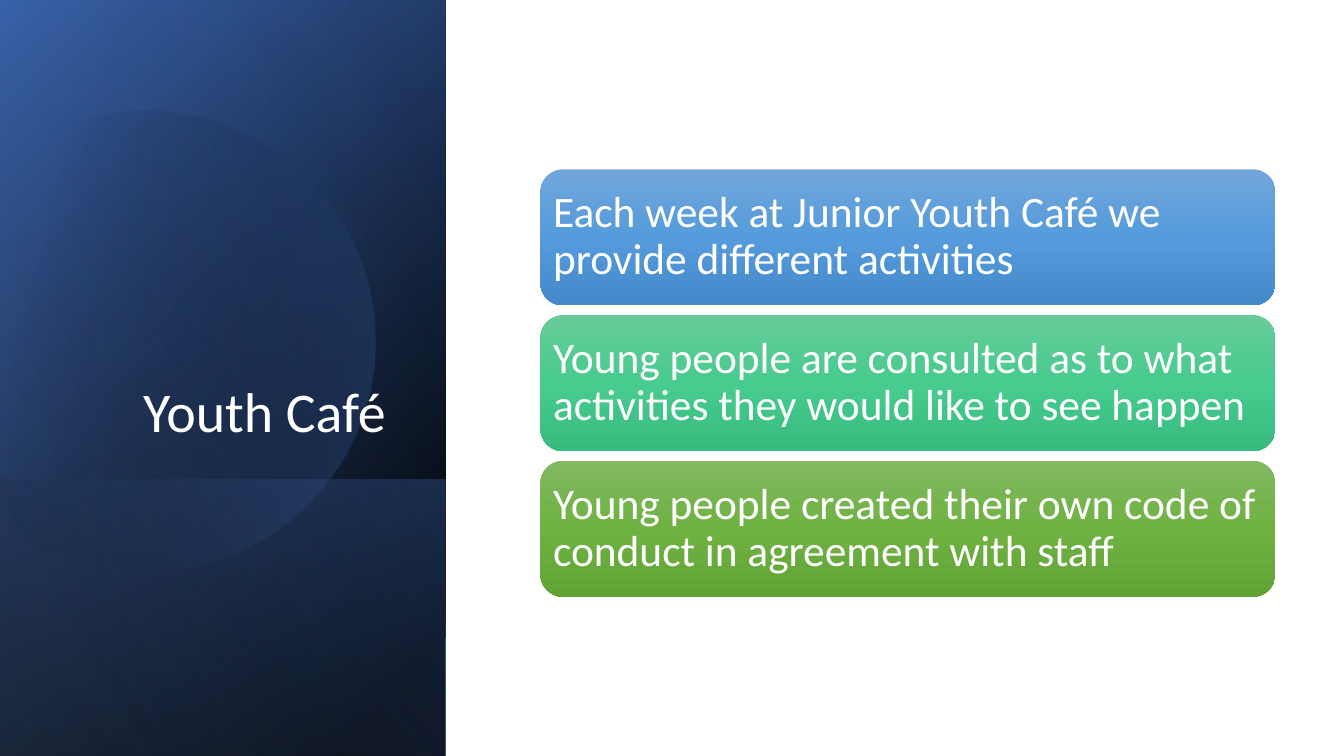
from math import cos, radians, sin

from lxml.etree import SubElement
from pptx import Presentation
from pptx.enum.shapes import MSO_SHAPE
from pptx.enum.text import MSO_ANCHOR, PP_ALIGN
from pptx.oxml.ns import qn
from pptx.util import Inches, Pt

# Content
TITLE = "Youth Café "
COLORS = {
    "white": "FFFFFF", "black": "000000", "navy": "2F5597",
    "blue": "4472C4", "pale": "8FAADC",
    "sky 1": "71A6DB", "sky 2": "559BDB", "sky 3": "448ACA",
    "mint 1": "67CC9A", "mint 2": "47CB8E", "mint 3": "39BB7F",
    "leaf 1": "81B861", "leaf 2": "6FB242", "leaf 3": "62A336",
}
CARDS = [
    ("sky", "Each week at Junior Youth Café we provide different activities"),
    ("mint", "Young people are consulted as to what activities they would like to see happen"),
    ("leaf", "Young people created their own code of conduct in agreement with staff"),
]
FONT = "Calibri"

# Layout in inches
WIDTH, HEIGHT = 13.33, 7.5
PANEL_WIDTH = 4.42
FOOT_HEIGHT = 2.74
CARD_LEFT, CARD_TOP, CARD_WIDTH, CARD_HEIGHT = 5.36, 1.68, 7.29, 1.35
CARD_PITCH = 1.445

# Panel layers: visible height, gradient angle, stops (position, colour, opacity)
BACK_LAYERS = [
    (HEIGHT, 50, [(8, "black", 100), (100, "navy", 100)]),
    (HEIGHT, 30, [(0, "black", 0), (99, "blue", 46)]),
    (FOOT_HEIGHT, 130, [(2, "blue", 29), (100, "black", 30)]),
]
FRONT_LAYER = (HEIGHT, 120, [(0, "black", 0), (99, "pale", 11)])

# Disc outline on the slide: start, curves (two controls and an end), corners
DISC_START = (1.49, 1.1)
DISC_CURVES = [
    ((2.46, 1.12), (3.35, 1.77), (3.63, 2.75)),
    ((3.98, 3.97), (3.28, 5.23), (2.07, 5.58)),
    ((1.31, 5.8), (0.53, 5.61), (-0.03, 5.14)),
    ((-0.15, 5.03), (-0.15, 1.75), (0, 1.61)),
    ((0.23, 1.42), (0.5, 1.28), (0.8, 1.19)),
    ((1.03, 1.13), (1.26, 1.1), (1.49, 1.1)),
]
STRAIGHT_CURVE = 3  # this entry is three straight edges
DISC_CENTER = (1.585, 3.345)
DISC_ROTATION = 343.9
CURVE_STEPS = 16

presentation = Presentation()
presentation.slide_width, presentation.slide_height = Inches(WIDTH), Inches(HEIGHT)
slide = presentation.slides.add_slide(presentation.slide_layouts[6])


def paint(shape, angle, stops):
    """Give a shape a linear gradient, no line and no shadow."""
    shape.shadow.inherit = False
    shape.line.fill.background()
    shape.fill.gradient()
    gradient = shape.element.spPr.find(qn("a:gradFill"))
    stop_list = gradient.find(qn("a:gsLst"))
    for old_stop in list(stop_list):
        stop_list.remove(old_stop)
    for position, color, opacity in stops:
        stop = SubElement(stop_list, qn("a:gs"), pos=str(position * 1000))
        fill_color = SubElement(stop, qn("a:srgbClr"), val=COLORS[color])
        if opacity < 100:
            SubElement(fill_color, qn("a:alpha"), val=str(opacity * 1000))
    gradient.find(qn("a:lin")).set("ang", str(angle * 60000))


def write(shape, text, size, align, anchor):
    frame = shape.text_frame
    frame.text = text
    frame.word_wrap = True
    frame.vertical_anchor = anchor
    paragraph = frame.paragraphs[0]
    paragraph.alignment = align
    paragraph.line_spacing = 0.9
    font = paragraph.runs[0].font
    font.name, font.size = FONT, Pt(size)
    font.fill.solid()
    font.fill.fore_color.rgb = font.fill.fore_color.rgb.from_string(COLORS["white"]) \
        if font.fill.fore_color.type else white
    return frame


def add_panel(height, angle, stops):
    """A quarter-turned, mirrored rectangle standing on the slide's foot."""
    left = (PANEL_WIDTH - height) / 2
    top = HEIGHT - height / 2 - PANEL_WIDTH / 2
    panel = slide.shapes.add_shape(
        MSO_SHAPE.RECTANGLE, Inches(left), Inches(top), Inches(height), Inches(PANEL_WIDTH))
    panel.rotation = 90
    panel.element.spPr.find(qn("a:xfrm")).set("flipH", "1")
    paint(panel, angle, stops)


def disc_points():
    points = [DISC_START]
    for number, curve in enumerate(DISC_CURVES):
        if number == STRAIGHT_CURVE:
            points.extend(curve)
            continue
        corners = (points[-1], *curve)
        for step in range(1, CURVE_STEPS + 1):
            t = step / CURVE_STEPS
            weights = ((1 - t) ** 3, 3 * t * (1 - t) ** 2, 3 * t * t * (1 - t), t ** 3)
            points.append(tuple(
                sum(weight * corner[axis] for weight, corner in zip(weights, corners))
                for axis in (0, 1)))
    return points


def turn_back(point):
    """Undo the disc's rotation, which the shape itself carries."""
    angle = radians(-DISC_ROTATION)
    x, y = point[0] - DISC_CENTER[0], point[1] - DISC_CENTER[1]
    return (Inches(DISC_CENTER[0] + x * cos(angle) - y * sin(angle)),
            Inches(DISC_CENTER[1] + x * sin(angle) + y * cos(angle)))


from pptx.dml.color import RGBColor
white = RGBColor.from_string(COLORS["white"])

# Left panel with disc
for layer in BACK_LAYERS:
    add_panel(*layer)
start, *others = [turn_back(point) for point in disc_points()]
builder = slide.shapes.build_freeform(*start)
builder.add_line_segments(others, close=True)
disc = builder.convert_to_shape()
disc.rotation = DISC_ROTATION
paint(disc, 30, [(29, "black", 0), (100, "blue", 43)])
add_panel(*FRONT_LAYER)

# Title
title = slide.shapes.add_textbox(Inches(0.64), Inches(1.84), Inches(3.41), Inches(2.62))
write(title, TITLE, 40, PP_ALIGN.RIGHT, MSO_ANCHOR.BOTTOM)

# Cards
for row, (hue, text) in enumerate(CARDS):
    card = slide.shapes.add_shape(
        MSO_SHAPE.ROUNDED_RECTANGLE, Inches(CARD_LEFT), Inches(CARD_TOP + row * CARD_PITCH),
        Inches(CARD_WIDTH), Inches(CARD_HEIGHT))
    paint(card, 90, [(50 * i, f"{hue} {i + 1}", 100) for i in range(3)])
    frame = write(card, text, 31, PP_ALIGN.LEFT, MSO_ANCHOR.MIDDLE)
    frame.margin_left = frame.margin_right = Inches(0.06)
    frame.margin_top = frame.margin_bottom = Inches(0.06)

presentation.save("out.pptx")
